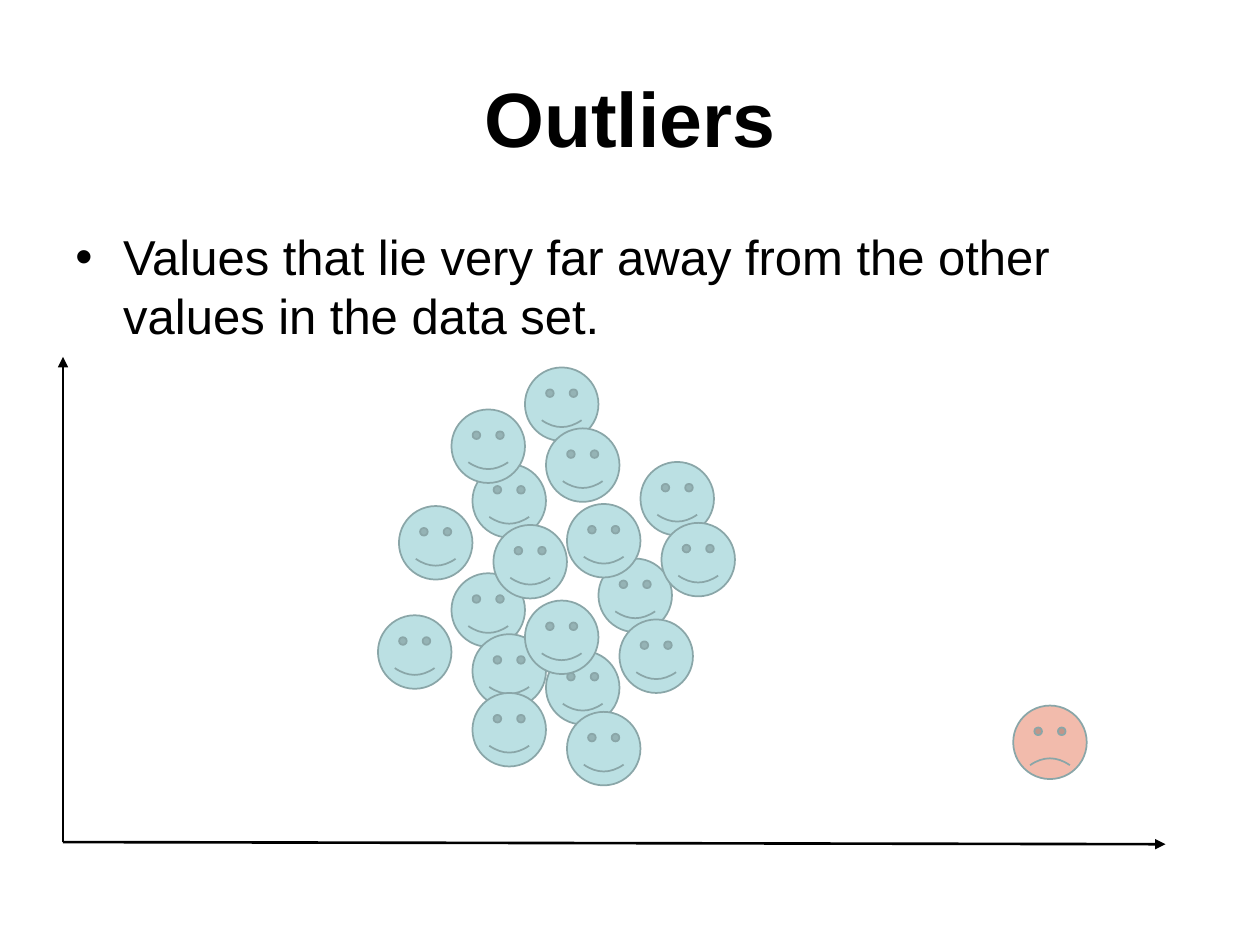
from dataclasses import dataclass

from lxml import etree
from pptx import Presentation
from pptx import util as u
from pptx.dml import color
from pptx.enum import shapes, text
from pptx.oxml import ns

COLORS = {"ink": "000000", "typical": "BBE0E3", "outlier": "F2BBAC", "outline": "8AA6A8"}
FONT = "Arial"
COLUMNS = 120
SLIDE_WIDTH, SLIDE_HEIGHT = u.Inches(10), u.Inches(7.5)
CELL = SLIDE_WIDTH / COLUMNS
FACE_SIZE = 7
FROWN = -0.047


@dataclass(frozen=True)
class Spot:
    column: float
    row: float

    def shifted(self, step: "Spot") -> "Spot":
        return Spot(self.column + step.column, self.row + step.row)


@dataclass(frozen=True)
class TextBlock:
    words: str
    corner: Spot
    width: float
    height: float
    size: int
    bold: bool
    align: text.PP_ALIGN
    anchor: text.MSO_ANCHOR


TITLE = TextBlock("Outliers", Spot(6, 3.6), 108, 15, 44, True,
                  text.PP_ALIGN.CENTER, text.MSO_ANCHOR.MIDDLE)
DEFINITION = TextBlock(
    "Values that lie very far away from the other values in the data set.",
    Spot(6, 21), 108, 59.4, 28, False, text.PP_ALIGN.LEFT, text.MSO_ANCHOR.TOP)

ORIGIN = Spot(6, 80.2)
AXIS_ENDS = (Spot(111, 80.4), Spot(6, 34))
TRIO_STARTS = (Spot(43, 54.6), Spot(52, 62), Spot(57, 53.2),
               Spot(61, 44), Spot(45, 44.2), Spot(50, 35))
TRIO_STEPS = (Spot(0, 0), Spot(-7, 4), Spot(2, 5.8))
OUTLIER = Spot(96.5, 67.2)


def cells(count: float) -> u.Emu:
    return u.Emu(round(count * CELL))


def rgb(name: str) -> color.RGBColor:
    return color.RGBColor.from_string(COLORS[name])


def add_text(page, block: TextBlock):
    box = page.shapes.add_textbox(cells(block.corner.column), cells(block.corner.row),
                                  cells(block.width), cells(block.height))
    frame = box.text_frame
    frame.word_wrap = True
    frame.vertical_anchor = block.anchor
    frame.text = block.words
    para = frame.paragraphs[0]
    para.alignment = block.align
    span = para.runs[0]
    span.font.name = FONT
    span.font.size = u.Pt(block.size)
    span.font.bold = block.bold
    span.font.color.rgb = rgb("ink")
    return para


def add_bullet(para) -> None:
    para.space_before = u.Pt(5.6)
    properties = para._p.get_or_add_pPr()
    indent = u.Inches(0.38)
    properties.set("marL", str(indent))
    properties.set("indent", str(-indent))
    etree.SubElement(properties, ns.qn("a:buFont"), typeface=FONT)
    etree.SubElement(properties, ns.qn("a:buChar"), char="•")


def add_axis(group, end: Spot) -> None:
    axis = group.shapes.add_connector(
        shapes.MSO_CONNECTOR.STRAIGHT, cells(ORIGIN.column), cells(ORIGIN.row),
        cells(end.column), cells(end.row))
    axis.line.color.rgb = rgb("ink")
    axis.line.width = u.Pt(1.5)
    etree.SubElement(axis.line._get_or_add_ln(), ns.qn("a:tailEnd"), type="triangle")
    etree.SubElement(axis._element.spPr, ns.qn("a:effectLst"))


def add_face(group, spot: Spot, fill: str):
    face = group.shapes.add_shape(
        shapes.MSO_SHAPE.SMILEY_FACE, cells(spot.column), cells(spot.row),
        cells(FACE_SIZE), cells(FACE_SIZE))
    face.shadow.inherit = False
    face.fill.solid()
    face.fill.fore_color.rgb = rgb(fill)
    face.line.color.rgb = rgb("outline")
    face.line.width = u.Pt(1)
    return face


def main() -> None:
    deck = Presentation()
    deck.slide_width, deck.slide_height = SLIDE_WIDTH, SLIDE_HEIGHT
    page = deck.slides.add_slide(deck.slide_layouts[6])
    add_text(page, TITLE)
    add_bullet(add_text(page, DEFINITION))
    plot = page.shapes.add_group_shape()
    for end in AXIS_ENDS:
        add_axis(plot, end)
    for start in TRIO_STARTS:
        for step in TRIO_STEPS:
            add_face(plot, start.shifted(step), "typical")
    add_face(plot, OUTLIER, "outlier").adjustments[0] = FROWN
    deck.save("out.pptx")


if __name__ == "__main__":
    main()
